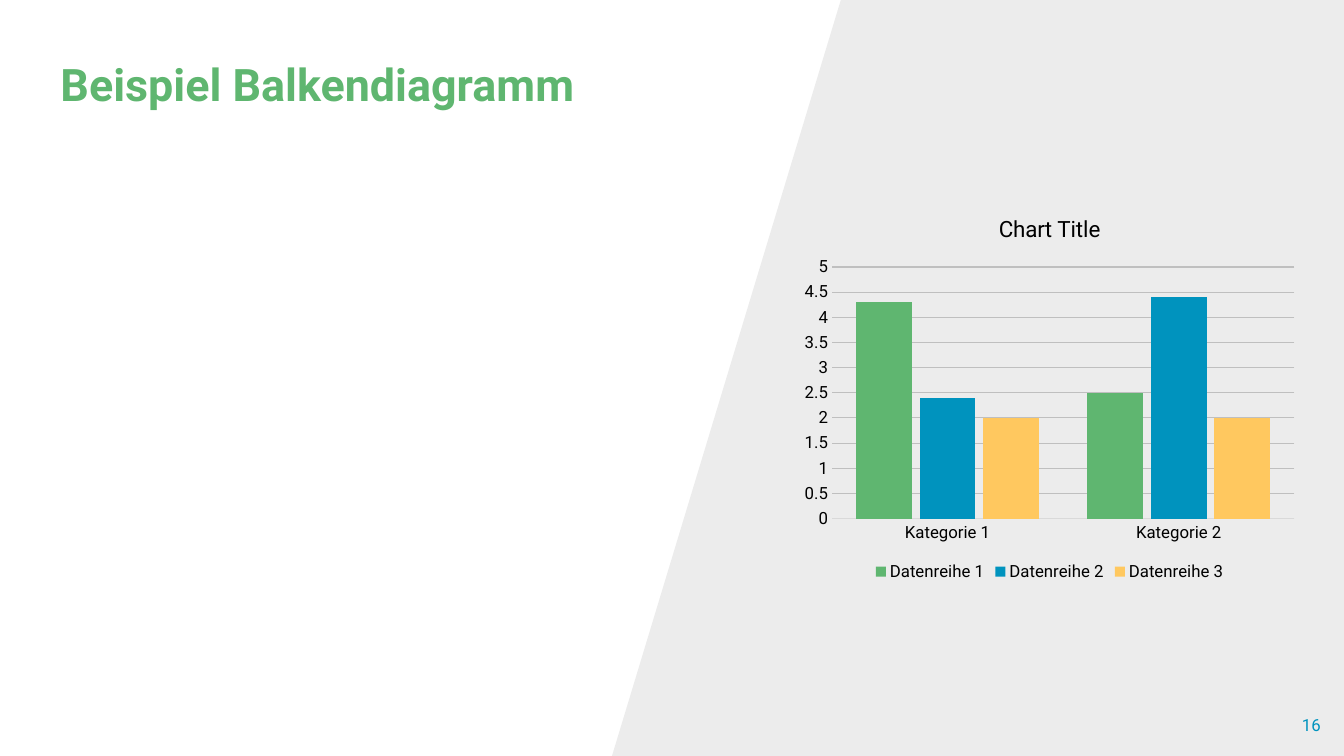
from pptx import Presentation
from pptx.chart.data import CategoryChartData
from pptx.dml.color import RGBColor
from pptx.enum.chart import XL_CHART_TYPE as ChartType
from pptx.enum.chart import XL_LEGEND_POSITION as LegendPosition
from pptx.enum.chart import XL_TICK_MARK as TickMark
from pptx.enum.text import MSO_ANCHOR as Anchor
from pptx.enum.text import PP_ALIGN as Align
from pptx.util import Inches, Pt

FONT = "Roboto"
GREEN = RGBColor(0x5F, 0xB6, 0x70)
BLUE = RGBColor(0x00, 0x93, 0xBE)
YELLOW = RGBColor(0xFF, 0xC8, 0x5F)
BLACK = RGBColor(0x00, 0x00, 0x00)
PANEL_GRAY = RGBColor(0xEC, 0xEC, 0xEC)
GRID_GRAY = RGBColor(0xBF, 0xBF, 0xBF)
AXIS_GRAY = RGBColor(0xD9, 0xD9, 0xD9)

CATEGORIES = ["Kategorie 1", "Kategorie 2"]
SERIES = [
    ("Datenreihe 1", (4.3, 2.5), GREEN),
    ("Datenreihe 2", (2.4, 4.4), BLUE),
    ("Datenreihe 3", (2, 2), YELLOW),
]


def style_font(font, size, color, bold=False):
    font.name = FONT
    font.size = Pt(size)
    font.bold = bold
    font.color.rgb = color


def style_line(line, color):
    line.color.rgb = color
    line.width = Pt(0.75)


def fill_text(shape, text, size, color, anchor, align, bold=False):
    """Write one line of text into a shape without inner margins."""
    frame = shape.text_frame
    frame.margin_left = frame.margin_right = 0
    frame.margin_top = frame.margin_bottom = 0
    frame.word_wrap = True
    frame.vertical_anchor = anchor
    frame.text = text
    paragraph = frame.paragraphs[0]
    paragraph.alignment = align
    style_font(paragraph.runs[0].font, size, color, bold)
    return paragraph


def add_panel(slide):
    """Add the slanted gray area behind everything else."""
    corners = [(13.33, 0), (13.33, 7.5), (6.07, 7.5)]
    builder = slide.shapes.build_freeform(Inches(8.34), 0)
    builder.add_line_segments([(Inches(x), Inches(y)) for x, y in corners])
    panel = builder.convert_to_shape()
    panel.shadow.inherit = False
    panel.fill.solid()
    panel.fill.fore_color.rgb = PANEL_GRAY
    panel.line.fill.background()
    slide.shapes._spTree.insert(2, panel._element)


def set_title(slide, text):
    title = slide.shapes.title
    title.left, title.top = Inches(0.6), Inches(0.63)
    title.width, title.height = Inches(6.76), Inches(0.47)
    paragraph = fill_text(title, text, 32, GREEN, Anchor.BOTTOM, Align.LEFT, bold=True)
    paragraph.line_spacing = 0.85


def add_page_number(slide, number):
    box = slide.shapes.add_textbox(Inches(12.6), Inches(7.09), Inches(0.5), Inches(0.2))
    fill_text(box, number, 12, BLUE, Anchor.MIDDLE, Align.RIGHT)


def style_axes(chart):
    for axis in (chart.category_axis, chart.value_axis):
        axis.major_tick_mark = axis.minor_tick_mark = TickMark.NONE
        style_font(axis.tick_labels.font, 12, BLACK)
    style_line(chart.category_axis.format.line, AXIS_GRAY)
    value_axis = chart.value_axis
    value_axis.minimum_scale = 0
    value_axis.maximum_scale = 5
    value_axis.major_unit = 0.5
    value_axis.format.line.fill.background()
    style_line(value_axis.major_gridlines.format.line, GRID_GRAY)


def add_column_chart(slide):
    data = CategoryChartData()
    data.categories = CATEGORIES
    for name, values, _ in SERIES:
        data.add_series(name, values)
    chart = slide.shapes.add_chart(
        ChartType.COLUMN_CLUSTERED,
        Inches(7.88), Inches(1.96), Inches(5.06), Inches(3.85), data,
    ).chart
    style_font(chart.font, 10, BLACK)

    chart.has_title = True
    title_frame = chart.chart_title.text_frame
    title_frame.text = "Chart Title"
    style_font(title_frame.paragraphs[0].runs[0].font, 16, BLACK)
    chart.chart_title.include_in_layout = False

    chart.has_legend = True
    chart.legend.position = LegendPosition.BOTTOM
    chart.legend.include_in_layout = False
    style_font(chart.legend.font, 12, BLACK)

    style_axes(chart)
    plot = chart.plots[0]
    plot.vary_by_categories = False
    plot.gap_width = 87
    plot.overlap = -14
    for series, (_, _, color) in zip(plot.series, SERIES):
        series.format.fill.solid()
        series.format.fill.fore_color.rgb = color


def main():
    presentation = Presentation()
    presentation.slide_width = Inches(13.33)
    presentation.slide_height = Inches(7.5)
    slide = presentation.slides.add_slide(presentation.slide_layouts[5])
    add_panel(slide)
    set_title(slide, "Beispiel Balkendiagramm")
    add_page_number(slide, "16")
    add_column_chart(slide)
    presentation.save("out.pptx")


if __name__ == "__main__":
    main()
